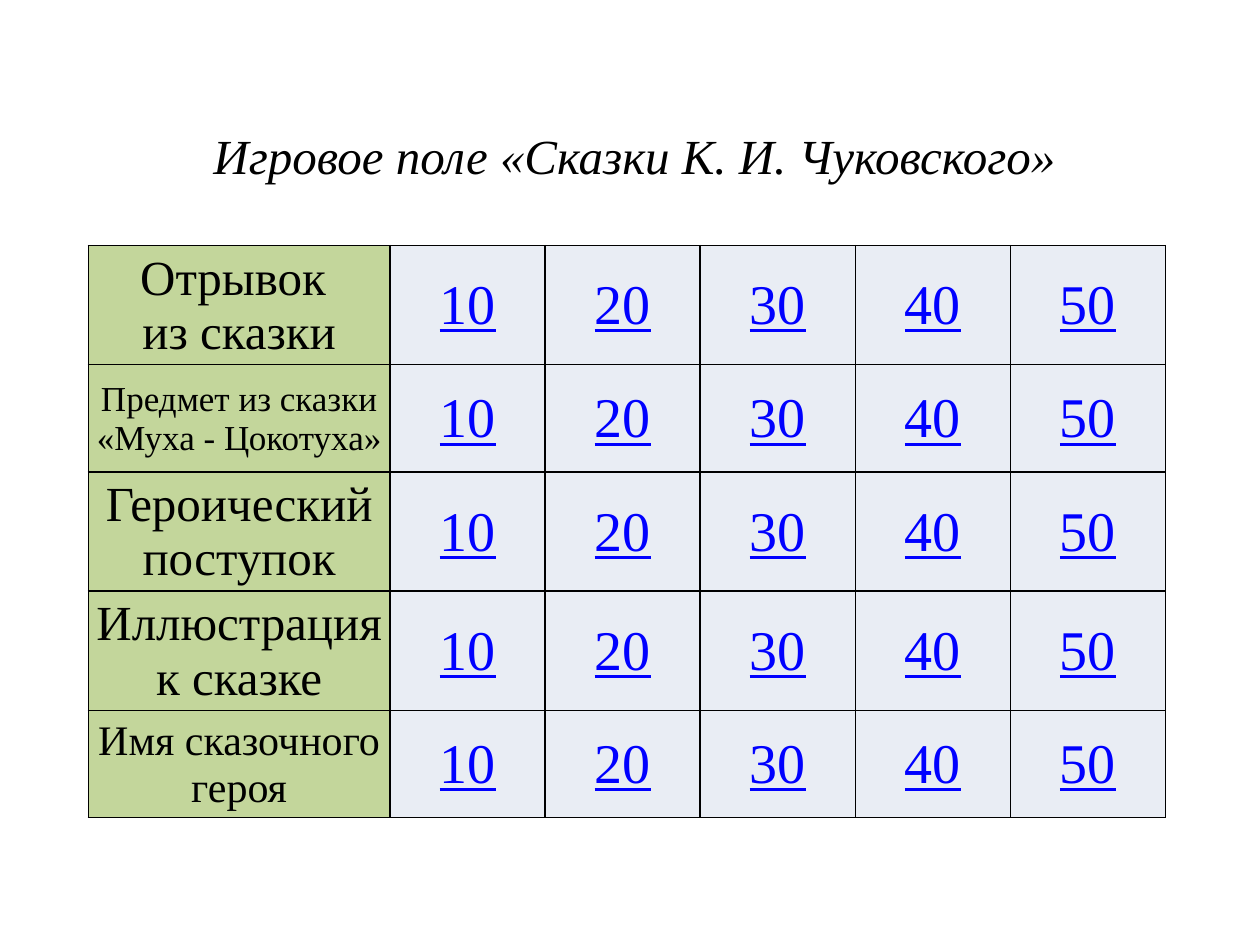
from dataclasses import dataclass

from lxml import etree
from pptx import Presentation
from pptx.dml.color import RGBColor
from pptx.enum.text import MSO_ANCHOR, MSO_AUTO_SIZE, PP_ALIGN
from pptx.oxml.ns import qn
from pptx.util import Cm, Pt

CENTER = PP_ALIGN.CENTER
MIDDLE = MSO_ANCHOR.MIDDLE
GROW = MSO_AUTO_SIZE.SHAPE_TO_FIT_TEXT
TITLE_ONLY = 5


@dataclass(frozen=True)
class Theme:
    font: str = "Times New Roman"
    ink: str = "000000"
    link: str = "0000FF"
    topic_fill: str = "C3D69B"
    points_fill: str = "E9EDF4"
    title_size: int = 28
    points_size: int = 32
    border: float = 1


THEME = Theme()

TITLE = "Игровое поле «Сказки К. И. Чуковского»"
# Topic and its type size
TOPICS = [
    ("Отрывок \nиз сказки", 28),
    ("Предмет из сказки «Муха - Цокотуха»", 20),
    ("Героический поступок", 28),
    ("Иллюстрация к сказке", 28),
    ("Имя сказочного героя", 24),
]
POINTS = [10, 20, 30, 40, 50]


def set_all(target, values):
    for name, value in values.items():
        setattr(target, name, value)


def write(frame, text, size, color, **font_values):
    frame.text = text
    for paragraph in frame.paragraphs:
        paragraph.alignment = CENTER
        for run in paragraph.runs:
            set_all(run.font, {"name": THEME.font, "size": Pt(size), **font_values})
            run.font.color.rgb = RGBColor.from_string(color)


def add_borders(cell):
    properties = cell._tc.get_or_add_tcPr()
    for position, side in enumerate(("lnL", "lnR", "lnT", "lnB")):
        line = etree.Element(qn(f"a:{side}"), w=str(Pt(THEME.border)))
        fill = etree.SubElement(line, qn("a:solidFill"))
        etree.SubElement(fill, qn("a:srgbClr"), val=THEME.ink)
        properties.insert(position, line)


def fill_cell(cell, text, size, color, background, **font_values):
    set_all(cell, {
        "vertical_anchor": MIDDLE,
        "margin_left": Cm(0.03),
        "margin_right": Cm(0.03),
        "margin_top": Cm(0.03),
        "margin_bottom": 0,
    })
    cell.fill.solid()
    cell.fill.fore_color.rgb = RGBColor.from_string(background)
    add_borders(cell)
    write(cell.text_frame, text, size, color, **font_values)


def place_title(slide, left, top, width, height):
    title = slide.shapes.title
    set_all(title, {"left": left, "top": top, "width": width, "height": height})
    set_all(title.text_frame, {"word_wrap": True, "auto_size": GROW})
    write(title.text_frame, TITLE, THEME.title_size, THEME.ink, italic=True)


def add_game_board(slide, left, top, width, height):
    board = slide.shapes.add_table(
        len(TOPICS), len(POINTS) + 1, left, top, width, height
    ).table
    set_all(board, {"first_row": False, "horz_banding": False})

    # The topic column is wider; the points share the rest
    topic_width = int(width * 0.28)
    for index, column in enumerate(board.columns):
        column.width = (width - topic_width) // len(POINTS) if index else topic_width

    for row, (topic, size) in enumerate(TOPICS):
        fill_cell(board.cell(row, 0), topic, size, THEME.ink, THEME.topic_fill)
        for column, points in enumerate(POINTS, start=1):
            fill_cell(board.cell(row, column), str(points), THEME.points_size,
                      THEME.link, THEME.points_fill, underline=True)


def main():
    deck = Presentation()
    set_all(deck, {"slide_width": Cm(25.4), "slide_height": Cm(19.05)})
    slide = deck.slides.add_slide(deck.slide_layouts[TITLE_ONLY])
    place_title(slide, Cm(2.77), Cm(2.39), Cm(20.04), Cm(1.45))
    add_game_board(slide, Cm(1.78), Cm(4.95), Cm(21.72), Cm(10.8))
    deck.save("out.pptx")


if __name__ == "__main__":
    main()
